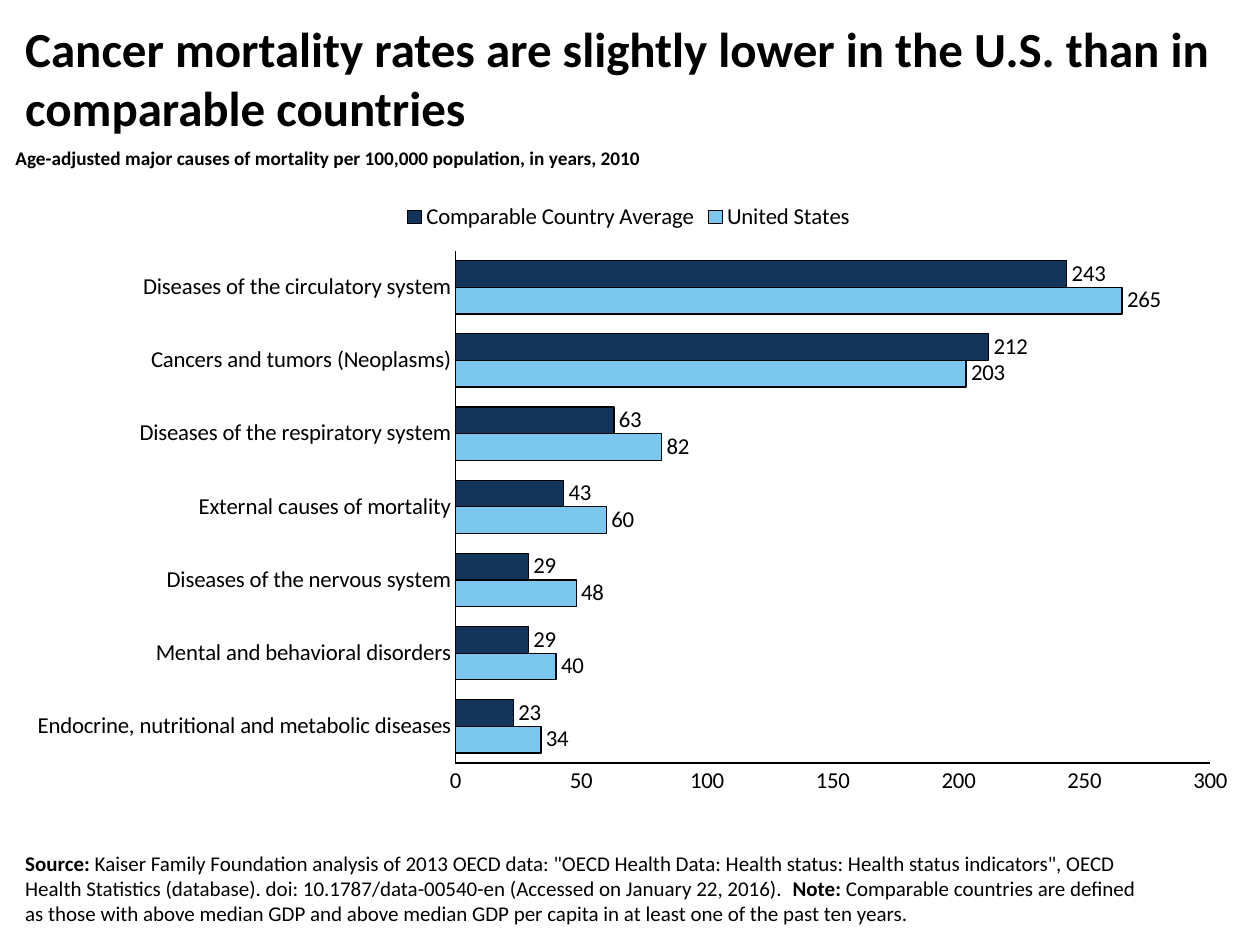
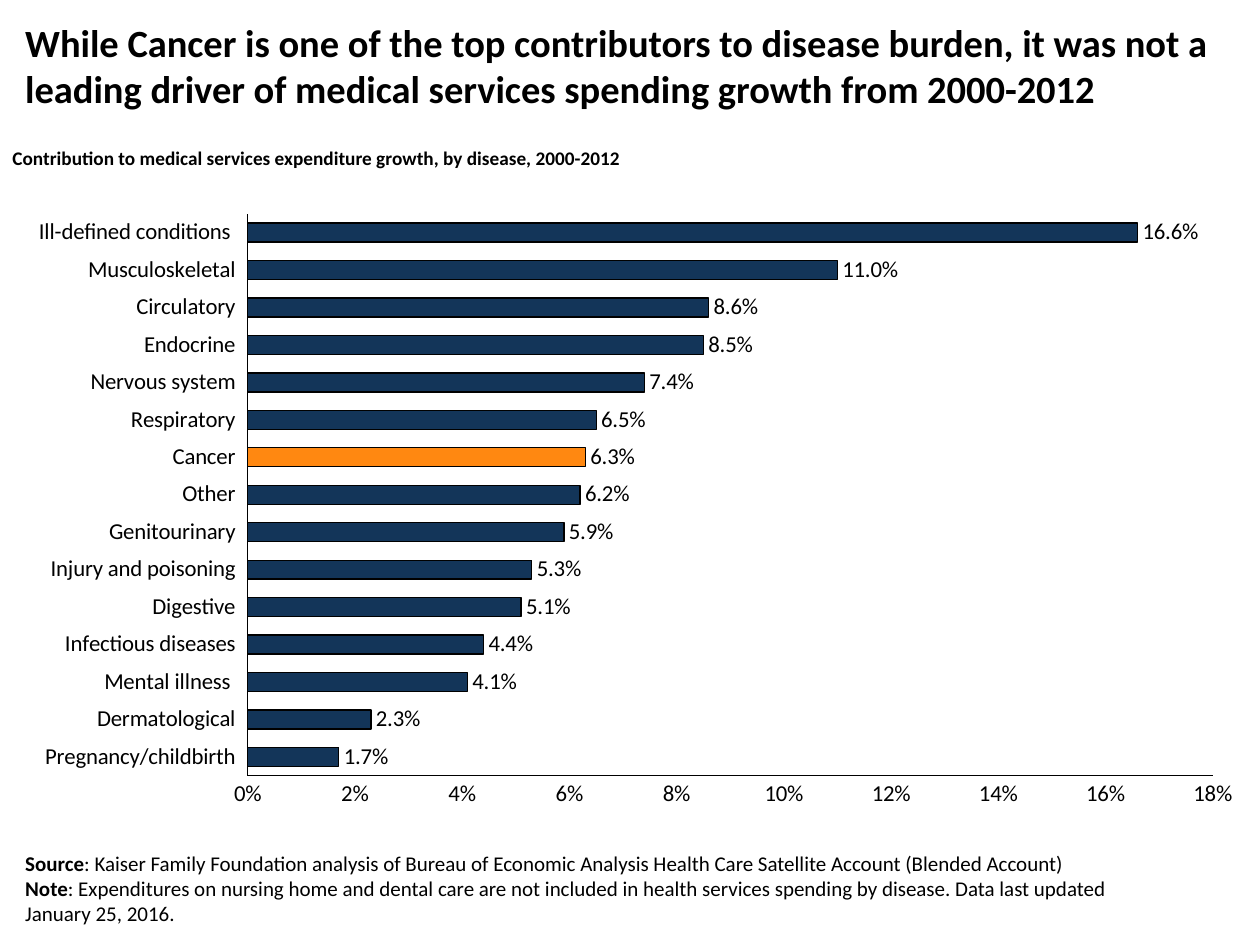
from dataclasses import dataclass

from lxml.etree import SubElement
from pptx import Presentation
from pptx.chart.data import CategoryChartData
from pptx.dml.color import RGBColor
from pptx.enum.chart import (XL_CHART_TYPE, XL_LABEL_POSITION, XL_LEGEND_POSITION,
                             XL_TICK_LABEL_POSITION, XL_TICK_MARK)
from pptx.enum.text import MSO_ANCHOR, MSO_AUTO_SIZE, PP_ALIGN
from pptx.oxml.ns import qn
from pptx.util import Inches, Pt


@dataclass
class Theme:
    face: str = "Calibri"
    ink: RGBColor = RGBColor(0, 0, 0)
    navy: RGBColor = RGBColor(0x13, 0x35, 0x59)
    sky: RGBColor = RGBColor(0x7B, 0xC7, 0xED)
    orange: RGBColor = RGBColor(0xFF, 0x88, 0x11)
    line: float = 0.75
    label: int = 13
    note: int = 12
    sub: int = 11


theme = Theme()


def style(font, size, bold=None):
    font.name = theme.face
    font.size = Pt(size)
    font.color.rgb = theme.ink
    font.bold = bold


def edge(line):
    line.color.rgb = theme.ink
    line.width = Pt(theme.line)


pages = [
    {
        "title": "Cancer mortality rates are slightly lower in the U.S. than in comparable countries",
        "size": 28,
        "sub": "Age-adjusted major causes of mortality per 100,000 population, in years, 2010",
        "wide": 5.21,
        "align": PP_ALIGN.CENTER,
        "notes": [[
            ("Source: ", True),
            ("Kaiser Family Foundation analysis of 2013 OECD data: \"OECD Health Data: Health status: "
             "Health status indicators\", OECD Health Statistics (database). doi: 10.1787/data-00540-en "
             "(Accessed on January 22, 2016).  ", False),
            ("Note: ", True),
            ("Comparable countries are defined as those with above median GDP and above median GDP "
             "per capita in at least one of the past ten years.", False),
        ]],
        "place": (0.08, 1.5, 9.82, 4.9),
        "plot": (0.36, 0.1, 0.61, 0.83),
        "gap": 75,
        "top": 300,
        "step": 50,
        "format": "0",
        "low": False,
        "legend": True,
        "accent": None,
        "cats": ["Endocrine, nutritional and metabolic diseases", "Mental and behavioral disorders",
                 "Diseases of the nervous system", "External causes of mortality",
                 "Diseases of the respiratory system", "Cancers and tumors (Neoplasms)",
                 "Diseases of the circulatory system"],
        "series": [
            ("United States", [34, 40, 48, 60, 82, 203, 265], theme.sky, "#,##0"),
            ("Comparable Country Average", [23, 29, 29, 43, 63, 212, 243], theme.navy, "0"),
        ],
    },
    {
        "title": "While Cancer is one of the top contributors to disease burden, it was not a leading "
                 "driver of medical services spending growth from 2000-2012",
        "size": 22,
        "sub": "Contribution to medical services expenditure growth, by disease, 2000-2012",
        "wide": 5.08,
        "align": PP_ALIGN.LEFT,
        "notes": [
            [("Source", True),
             (": Kaiser Family Foundation analysis of Bureau of Economic Analysis Health Care "
              "Satellite Account (Blended Account)", False)],
            [("Note", True),
             (": Expenditures on nursing home and dental care are not included in health services "
              "spending by disease. Data last updated January 25, 2016.", False)],
        ],
        "place": (0.1, 1.6, 9.82, 4.9),
        "plot": (0.19, 0.02, 0.78, 0.91),
        "gap": 98,
        "top": 0.18,
        "step": 0.02,
        "format": "0%",
        "low": True,
        "legend": False,
        "accent": "Cancer",
        "cats": ["Pregnancy/childbirth", "Dermatological", "Mental illness ", "Infectious diseases",
                 "Digestive", "Injury and poisoning", "Genitourinary", "Other", "Cancer",
                 "Respiratory", "Nervous system", "Endocrine", "Circulatory", "Musculoskeletal",
                 "Ill-defined conditions "],
        "series": [
            ("Series 1", [0.017, 0.023, 0.041, 0.044, 0.051, 0.053, 0.059, 0.062, 0.063, 0.065,
                          0.074, 0.085, 0.086, 0.11, 0.166], theme.navy, "0.0%"),
        ],
    },
]

deck = Presentation()
deck.slide_width, deck.slide_height = Inches(10), Inches(7.5)

for page in pages:
    slide = deck.slides.add_slide(deck.slide_layouts[1])

    title = slide.shapes.title
    title.left, title.top, title.width, title.height = map(Inches, (0.1, 0.1, 9.8, 1))
    frame = title.text_frame
    frame.text = page["title"]
    frame.auto_size = MSO_AUTO_SIZE.NONE
    frame.vertical_anchor = MSO_ANCHOR.TOP
    frame.paragraphs[0].alignment = PP_ALIGN.LEFT
    style(frame.paragraphs[0].font, page["size"], True)

    box = slide.shapes.add_textbox(0, Inches(1.11), Inches(page["wide"]), Inches(0.29))
    frame = box.text_frame
    frame.text = page["sub"]
    frame.word_wrap = False
    frame.auto_size = MSO_AUTO_SIZE.SHAPE_TO_FIT_TEXT
    frame.paragraphs[0].alignment = page["align"]
    style(frame.paragraphs[0].font, theme.sub, True)

    body = slide.placeholders[1]
    body.left, body.top, body.width, body.height = map(Inches, (0.1, 6.8, 9.1, 0.6))
    frame = body.text_frame
    frame.auto_size = MSO_AUTO_SIZE.NONE
    frame.vertical_anchor = MSO_ANCHOR.BOTTOM
    for i, runs in enumerate(page["notes"]):
        para = frame.add_paragraph() if i else frame.paragraphs[0]
        props = para._p.get_or_add_pPr()
        props.set("marL", "0")
        props.set("indent", "0")
        SubElement(props, qn("a:buNone"))
        para.space_before = Pt(0)
        style(para.font, theme.note)
        for text, bold in runs:
            run = para.add_run()
            run.text = text
            run.font.bold = bold

    data = CategoryChartData()
    data.categories = page["cats"]
    for name, values, color, code in page["series"]:
        data.add_series(name, values, code)
    chart = slide.shapes.add_chart(XL_CHART_TYPE.BAR_CLUSTERED,
                                   *map(Inches, page["place"]), data).chart
    style(chart.font, theme.label)
    chart.has_title = False
    chart.has_legend = page["legend"]
    if page["legend"]:
        chart.legend.position = XL_LEGEND_POSITION.TOP
        chart.legend.include_in_layout = False

    for axis in (chart.category_axis, chart.value_axis):
        axis.has_major_gridlines = False
        axis.major_tick_mark = axis.minor_tick_mark = XL_TICK_MARK.NONE
        edge(axis.format.line)
    if page["low"]:
        chart.category_axis.tick_label_position = XL_TICK_LABEL_POSITION.LOW
    scale = chart.value_axis
    scale.minimum_scale, scale.maximum_scale = 0, page["top"]
    scale.major_unit = page["step"]
    scale.tick_labels.number_format = page["format"]
    scale.tick_labels.number_format_is_linked = False

    area = chart._chartSpace.chart.plotArea
    for old in area.findall(qn("c:layout")):
        area.remove(old)
    layout = SubElement(area, qn("c:layout"))
    area.insert(0, layout)
    manual = SubElement(layout, qn("c:manualLayout"))
    marks = [("layoutTarget", "inner"), ("xMode", "edge"), ("yMode", "edge")]
    for tag, value in marks + list(zip("xywh", page["plot"])):
        SubElement(manual, qn("c:" + tag)).set("val", str(value))

    plot = chart.plots[0]
    plot.gap_width = page["gap"]
    plot.overlap = 0
    plot.vary_by_categories = False
    for bars, (name, values, color, code) in zip(plot.series, page["series"]):
        bars.format.fill.solid()
        bars.format.fill.fore_color.rgb = color
        edge(bars.format.line)
        labels = bars.data_labels
        labels.show_value = True
        labels.position = XL_LABEL_POSITION.OUTSIDE_END
        labels.number_format = code
        labels.number_format_is_linked = False
        if page["accent"]:
            point = bars.points[page["cats"].index(page["accent"])]
            point.format.fill.solid()
            point.format.fill.fore_color.rgb = theme.orange
            edge(point.format.line)

deck.save("out.pptx")
